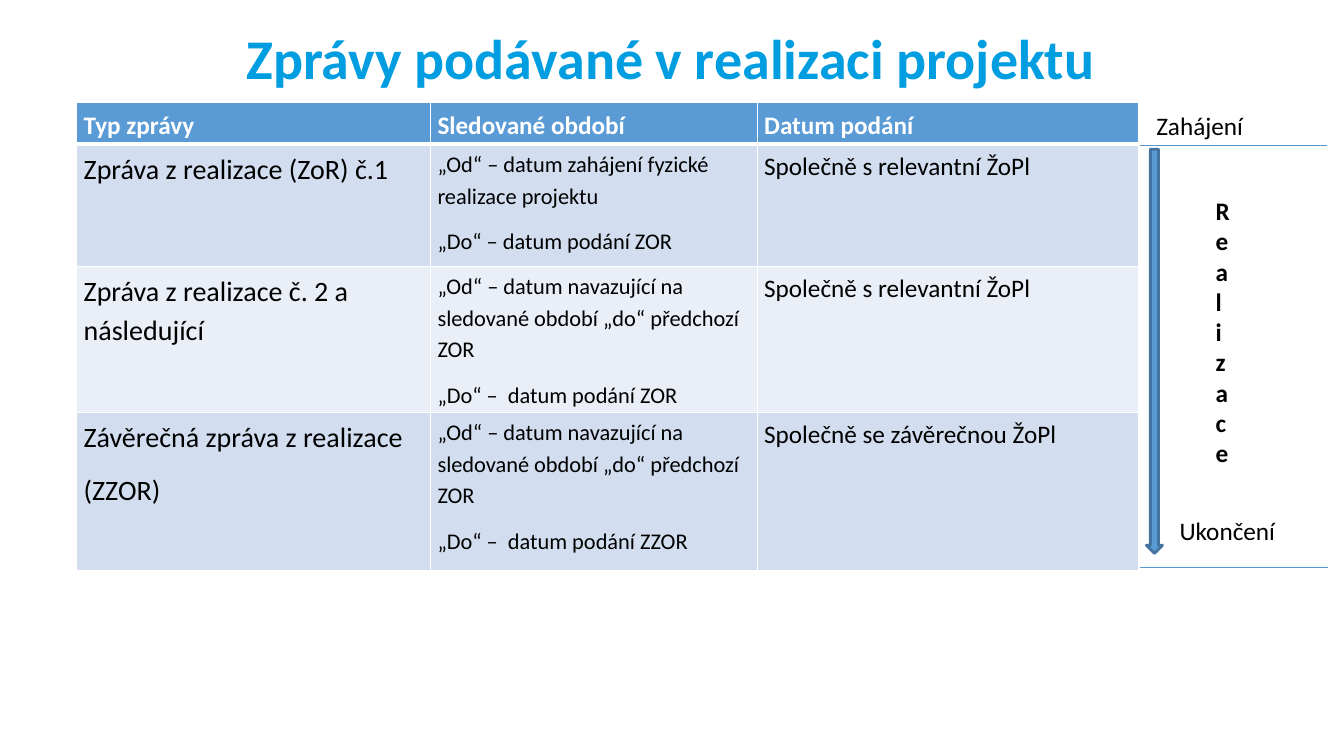
"""Build the slide on reports submitted during project implementation."""
import pptx
import pptx.chart.data
import pptx.dml.color
import pptx.enum.shapes
import pptx.enum.text
import pptx.oxml
import pptx.oxml.ns
import pptx.util
from pptx.util import Inches

FONT = "Calibri"
TITLE = "Zprávy podávané v realizaci projektu"
HEADINGS = [["Typ zprávy"], ["Sledované období"], ["Datum podání"]]
NEXT_PERIOD = "„Od“ – datum navazující na sledované období „do“ předchozí ZOR"
REPORTS = [
    [["Zpráva z realizace (ZoR) č.1"],
     ["„Od“ – datum zahájení fyzické realizace projektu", "„Do“ – datum podání ZOR"],
     ["Společně s relevantní ŽoPl"]],
    [["Zpráva z\u00a0realizace č. 2 a následující".replace("\u00a0", " ")],
     [NEXT_PERIOD, "„Do“ –  datum podání ZOR"],
     ["Společně s relevantní ŽoPl"]],
    [["Závěrečná zpráva z realizace", "(ZZOR)"],
     [NEXT_PERIOD, "„Do“ –  datum podání ZZOR"],
     ["Společně se závěrečnou ŽoPl"]],
]
COLUMN_WIDTHS = [3.51, 3.24, 3.78]
ROW_HEIGHTS = [0.38, 1.21, 1.22, 1.57]
COLUMN_SIZES = [20, 16, 18]
HEADING_SIZE = 18
HEADING_FILL = "5B9BD5"
BAND_FILLS = ["D2DEEF", "EAEFF7"]
MILESTONES = [("Zahájení", 11.37, 1.05, 1.44), ("Ukončení", 11.6, 5.06, 1.42)]
PHASE = "Realizace"
RULES = [(1.44, 13.16), (5.63, 13.17)]
RULE_LEFT = 11.31


def color(value):
    return pptx.dml.color.RGBColor.from_string(value)


def write(frame, lines, size, ink, bold=False):
    frame.text = "\n".join(lines)
    for para in frame.paragraphs:
        for span in para.runs:
            span.font.name = FONT
            span.font.size = pptx.util.Pt(size)
            span.font.bold = bold
            span.font.color.rgb = color(ink)


def set_borders(cell, widths):
    properties = cell._tc.get_or_add_tcPr()
    for position, (side, points) in enumerate(widths.items()):
        border = pptx.oxml.parse_xml(
            f'<a:{side} {pptx.oxml.ns.nsdecls("a")} w="{pptx.util.Pt(points)}">'
            '<a:solidFill><a:srgbClr val="FFFFFF"/></a:solidFill>'
            f'</a:{side}>')
        properties.insert(position, border)


def fill_cell(cell, lines, size, ink, fill, bold, top, bottom):
    cell.margin_left = cell.margin_right = Inches(0.07)
    cell.margin_top = cell.margin_bottom = Inches(0.03)
    cell.fill.solid()
    cell.fill.fore_color.rgb = color(fill)
    write(cell.text_frame, lines, size, ink, bold)
    for para in cell.text_frame.paragraphs:
        para.line_spacing = 1.15
        para.space_after = pptx.util.Pt(10)
    set_borders(cell, {"lnL": 1, "lnR": 1, "lnT": top, "lnB": bottom})


def add_reports(page):
    rows = [HEADINGS] + REPORTS
    table = page.shapes.add_table(
        len(rows), len(HEADINGS), Inches(0.76), Inches(1.02),
        Inches(sum(COLUMN_WIDTHS)), Inches(sum(ROW_HEIGHTS))).table
    for column, width in zip(table.columns, COLUMN_WIDTHS):
        column.width = Inches(width)
    for row, height in zip(table.rows, ROW_HEIGHTS):
        row.height = Inches(height)
    for r, row in enumerate(rows):
        for c, lines in enumerate(row):
            cell = table.cell(r, c)
            if r == 0:
                fill_cell(cell, lines, HEADING_SIZE, "FFFFFF", HEADING_FILL, True, 1, 3)
            else:
                fill_cell(cell, lines, COLUMN_SIZES[c], "000000",
                          BAND_FILLS[(r - 1) % 2], False, 3 if r == 1 else 1, 1)


def add_label(page, text, left, top, width, height, bold=False):
    box = page.shapes.add_textbox(Inches(left), Inches(top), Inches(width), Inches(height))
    frame = box.text_frame
    frame.word_wrap = True
    frame.auto_size = pptx.enum.text.MSO_AUTO_SIZE.SHAPE_TO_FIT_TEXT
    write(frame, [text], 18, "000000", bold)
    return frame


def add_timeline(page):
    for top, right in RULES:
        rule = page.shapes.add_connector(
            pptx.enum.shapes.MSO_CONNECTOR.STRAIGHT,
            Inches(RULE_LEFT), Inches(top), Inches(right), Inches(top))
        rule.line.color.rgb = color("5698D3")
        rule.line.width = pptx.util.Pt(0.75)
        rule._element.spPr.append(pptx.oxml.parse_xml(
            f'<a:effectLst {pptx.oxml.ns.nsdecls("a")}/>'))
    arrow = page.shapes.add_shape(
        pptx.enum.shapes.MSO_SHAPE.DOWN_ARROW,
        Inches(11.37), Inches(1.48), Inches(0.16), Inches(4.01))
    arrow.shadow.inherit = False
    arrow.fill.solid()
    arrow.fill.fore_color.rgb = color(HEADING_FILL)
    arrow.line.color.rgb = color("43739E")
    arrow.line.width = pptx.util.Pt(2)
    for text, left, top, width in MILESTONES:
        add_label(page, text, left, top, width, 0.4)
    phase = add_label(page, PHASE, 11.96, 1.46, 0.56, 3.66, bold=True)
    phase.vertical_anchor = pptx.enum.text.MSO_ANCHOR.MIDDLE
    phase._txBody.bodyPr.set("vert", "wordArtVert")


def main():
    deck = pptx.Presentation()
    deck.slide_width, deck.slide_height = Inches(13.33), Inches(7.5)
    page = deck.slides.add_slide(deck.slide_layouts[5])
    title = page.shapes.title
    title.left, title.top = Inches(0.65), Inches(0.11)
    title.width, title.height = Inches(12), Inches(0.91)
    write(title.text_frame, [TITLE], 40, "009DE0", True)
    title.text_frame.vertical_anchor = pptx.enum.text.MSO_ANCHOR.MIDDLE
    title.text_frame.paragraphs[0].alignment = pptx.enum.text.PP_ALIGN.CENTER
    add_reports(page)
    add_timeline(page)
    deck.save("out.pptx")


if __name__ == "__main__":
    main()
